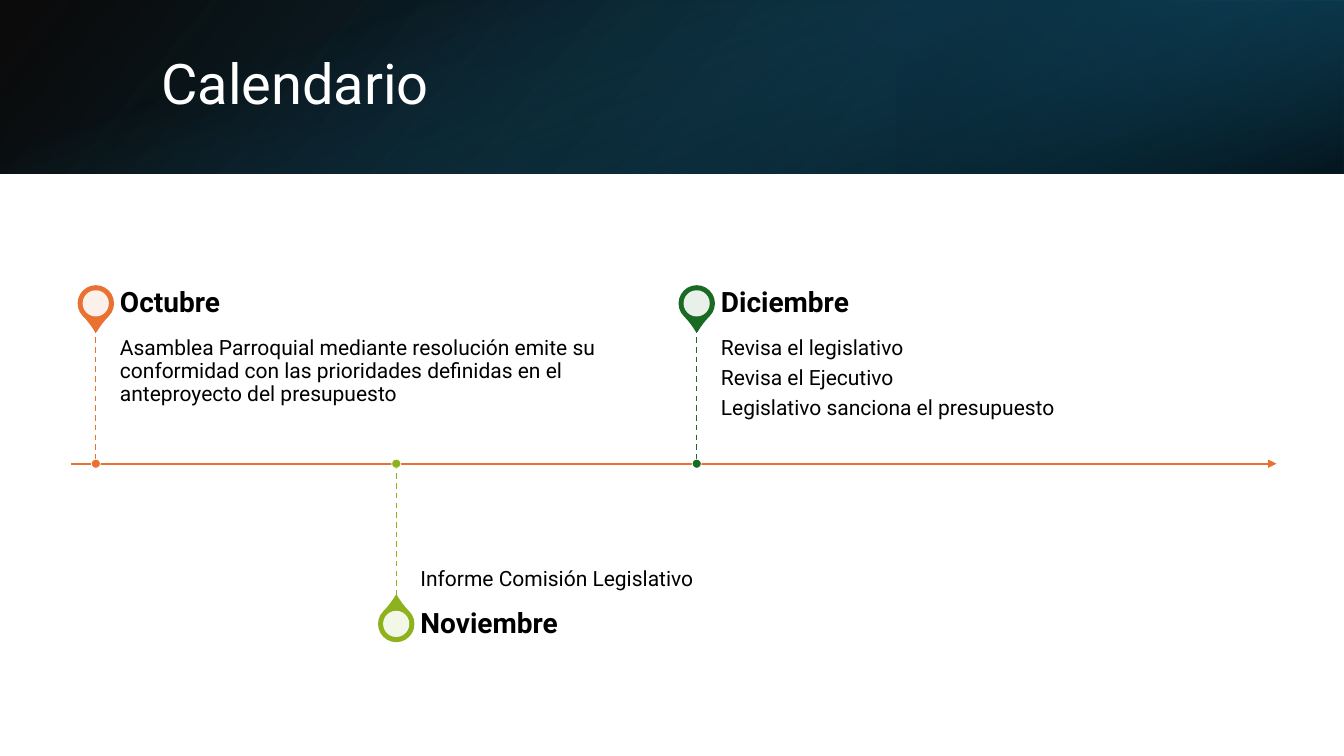
"""Build the Calendario timeline slide."""
import pptx
import pptx.util
import pptx.dml.color
import pptx.enum.dml
import pptx.enum.shapes
import pptx.enum.text
import pptx.oxml
import pptx.oxml.ns
from lxml import etree

Inches, Pt = pptx.util.Inches, pptx.util.Pt
SHAPE = pptx.enum.shapes.MSO_SHAPE
ANCHOR = pptx.enum.text.MSO_ANCHOR
qn = pptx.oxml.ns.qn

TITLE = "Calendario"
MONTHS = [
    ("Octubre", "orange", True, [
        "Asamblea Parroquial mediante resolución emite su conformidad "
        "con las prioridades definidas en el anteproyecto del presupuesto"]),
    ("Noviembre", "lime", False, ["Informe Comisión Legislativo"]),
    ("Diciembre", "green", True, [
        "Revisa el legislativo", "Revisa el Ejecutivo",
        "Legislativo sanciona el presupuesto"]),
]
COLORS = {
    "orange": "E97132", "lime": "8EB21E", "green": "196B24",
    "white": "FFFFFF", "black": "000000",
    "blue": "104862", "navy": "0B3041", "teal": "156082",
}
BANNER = [
    {"box": (0, 0, 13.33, 1.72), "rotation": 0, "flip": True, "angle": 140,
     "stops": [(0, "black", 96), (100, "blue", 100)]},
    {"box": (8.89, 0, 4.44, 1.72), "rotation": 180, "flip": True, "angle": 320,
     "stops": [(19, "navy", 68), (100, "teal", 79)]},
    {"box": (5.8, -5.8, 1.72, 13.33), "rotation": 90, "flip": False, "angle": 340,
     "stops": [(23, "teal", 0), (99, "black", 74)]},
]
FONT = "Roboto"
AXIS_LEFT, AXIS_RIGHT, AXIS_Y = 0.7, 12.66, 4.6
FIRST_X, STEP = 0.95, 2.98
TEXT_GAP, TEXT_WIDTH, BODY_HEIGHT, HEAD_HEIGHT = 0.24, 4.96, 1.35, 0.48
PIN, HOLE, DOT = 0.34, 0.26, 0.09


def rgb(name):
    return pptx.dml.color.RGBColor.from_string(COLORS[name])


def add_shape(slide, kind, box, fill, line=None, width=0):
    sp = slide.shapes.add_shape(kind, *map(Inches, box))
    sp.shadow.inherit = False
    sp.fill.solid()
    sp.fill.fore_color.rgb = rgb(fill)
    if line:
        sp.line.color.rgb = rgb(line)
        sp.line.width = Pt(width)
    else:
        sp.line.fill.background()
    return sp


def add_round(slide, kind, x, y, size, *style):
    return add_shape(slide, kind, (x - size / 2, y - size / 2, size, size), *style)


def add_banner(slide, box, rotation, flip, angle, stops):
    sp = add_shape(slide, SHAPE.RECTANGLE, box, "black")
    sp.rotation = rotation
    if flip:
        sp._element.spPr.find(qn("a:xfrm")).set("flipH", "1")
    grad = etree.Element(qn("a:gradFill"), rotWithShape="1")
    gs_list = etree.SubElement(grad, qn("a:gsLst"))
    for position, color, opacity in stops:
        gs = etree.SubElement(gs_list, qn("a:gs"), pos=str(position * 1000))
        clr = etree.SubElement(gs, qn("a:srgbClr"), val=COLORS[color])
        etree.SubElement(clr, qn("a:alpha"), val=str(opacity * 1000))
    etree.SubElement(grad, qn("a:lin"), ang=str(angle * 60000), scaled="0")
    solid = sp._element.spPr.find(qn("a:solidFill"))
    solid.getparent().replace(solid, grad)


def add_line(slide, start, end, color, width):
    line = slide.shapes.add_connector(
        pptx.enum.shapes.MSO_CONNECTOR.STRAIGHT, *map(Inches, start + end))
    line.line.color.rgb = rgb(color)
    line.line.width = Pt(width)
    etree.SubElement(line._element.spPr, qn("a:effectLst"))
    return line


def write(tf, lines, size, color, anchor, insets, bold=False):
    tf.word_wrap = True
    tf.vertical_anchor = anchor
    tf.margin_left, tf.margin_top, tf.margin_right, tf.margin_bottom = map(Inches, insets)
    for i, text in enumerate(lines):
        p = tf.add_paragraph() if i else tf.paragraphs[0]
        p.alignment = pptx.enum.text.PP_ALIGN.LEFT
        p.line_spacing = 0.9
        p.space_after = Pt(size * 0.35)
        r = p.add_run()
        r.text = text
        r.font.name, r.font.size, r.font.bold = FONT, Pt(size), bold
        r.font.color.rgb = rgb(color)


def add_text(slide, box, *style):
    write(slide.shapes.add_textbox(*map(Inches, box)).text_frame, *style)


def add_month(slide, x, name, color, above, lines):
    side = -1 if above else 1
    tip_y = AXIS_Y + side * BODY_HEIGHT
    pin_y = tip_y + side * HEAD_HEIGHT / 2

    pin = add_round(slide, SHAPE.TEAR, x, pin_y, PIN, color, color, 1.5)
    pin.adjustments[0] = 1.15
    pin.rotation = 135 if above else 315
    hole = add_round(slide, SHAPE.OVAL, x, pin_y, HOLE, "white")
    clr = hole._element.spPr.find(qn("a:solidFill"))[0]
    etree.SubElement(clr, qn("a:alpha"), val="90000")

    left = x + TEXT_GAP
    add_text(slide, (left, min(tip_y, AXIS_Y), TEXT_WIDTH, BODY_HEIGHT), lines, 15, "black",
             ANCHOR.TOP if above else ANCHOR.BOTTOM,
             (0, 0.1, 0.1, 0.16) if above else (0, 0.16, 0, 0.1))
    add_text(slide, (left, pin_y - HEAD_HEIGHT / 2, TEXT_WIDTH, HEAD_HEIGHT), [name], 20,
             "black", ANCHOR.MIDDLE, (0, 0, 0.14, 0), True)

    stem = add_line(slide, (x, min(tip_y, AXIS_Y)), (x, max(tip_y, AXIS_Y)), color, 1)
    stem.line.dash_style = pptx.enum.dml.MSO_LINE.DASH
    add_round(slide, SHAPE.OVAL, x, AXIS_Y, DOT, color, "white", 0.5)


def main():
    prs = pptx.Presentation()
    prs.slide_width, prs.slide_height = Inches(13.33), Inches(7.5)
    slide = prs.slides.add_slide(prs.slide_layouts[5])

    for part in BANNER:
        add_banner(slide, **part)

    title = slide.shapes.title
    title.left, title.top, title.width, title.height = map(Inches, (1.5, 0.38, 10.98, 0.96))
    write(title.text_frame, [TITLE], 40, "white", ANCHOR.MIDDLE, (0.1, 0.05, 0.1, 0.05))
    title.text_frame.paragraphs[0].space_after = Pt(0)
    slide.shapes._spTree.append(title._element)

    axis = add_line(slide, (AXIS_LEFT, AXIS_Y), (AXIS_RIGHT, AXIS_Y), "orange", 1.5)
    etree.SubElement(axis.line._get_or_add_ln(), qn("a:tailEnd"), type="triangle")
    for i, month in enumerate(MONTHS):
        add_month(slide, FIRST_X + i * STEP, *month)

    prs.save("out.pptx")


if __name__ == "__main__":
    main()
